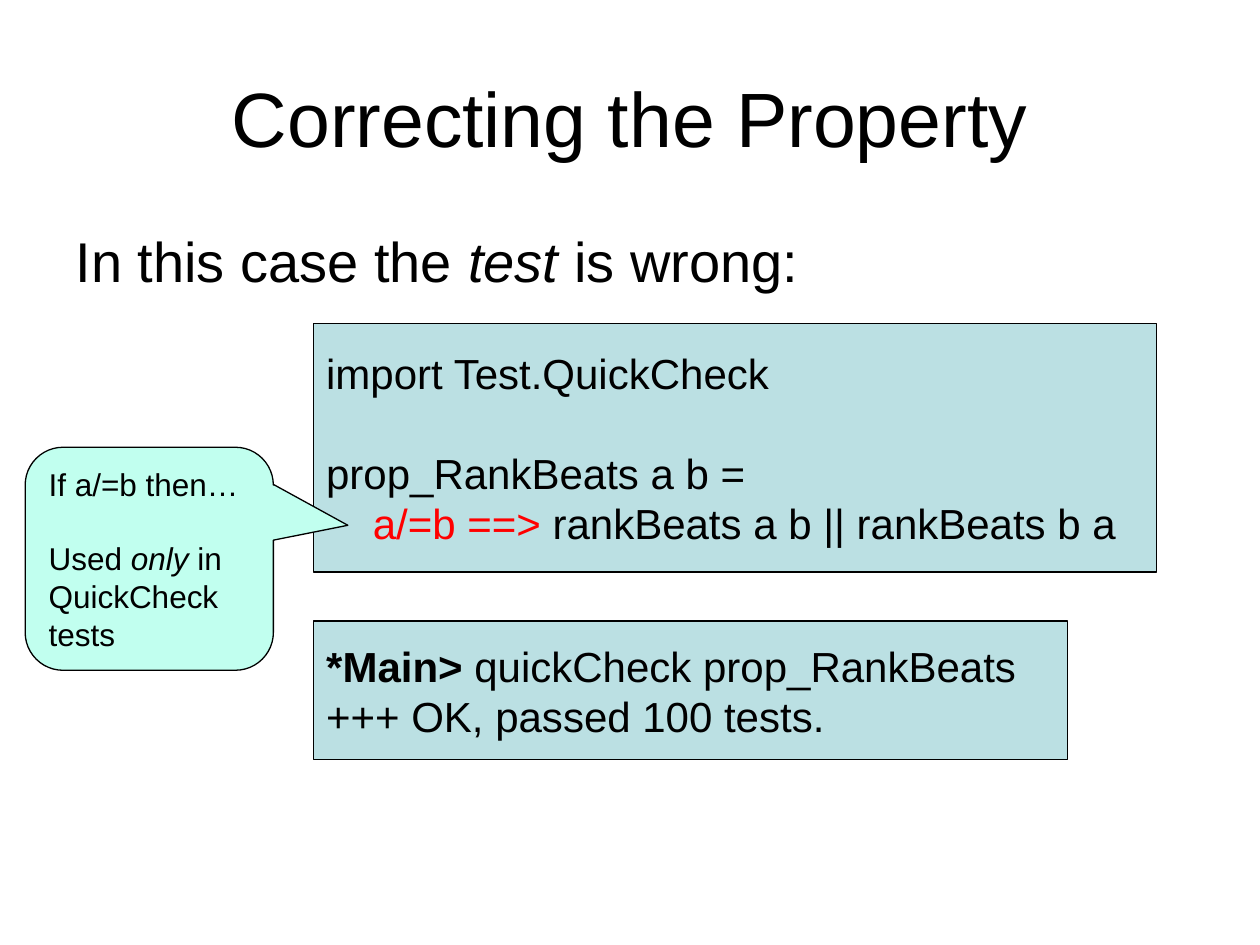
from dataclasses import dataclass
from lxml import etree
from pptx import Presentation
from pptx.dml.color import RGBColor
from pptx.enum.shapes import MSO_SHAPE
from pptx.enum.text import MSO_ANCHOR, PP_ALIGN
from pptx.oxml.ns import qn
from pptx.util import Inches, Pt

RECT = MSO_SHAPE.RECTANGLE
BUBBLE = MSO_SHAPE.ROUNDED_RECTANGULAR_CALLOUT
TOP, MIDDLE = MSO_ANCHOR.TOP, MSO_ANCHOR.MIDDLE
LEFT, CENTER = PP_ALIGN.LEFT, PP_ALIGN.CENTER


@dataclass(frozen=True)
class Theme:
    font: str = "Arial"
    ink: str = "000000"
    alert: str = "FF0000"
    panel: str = "BBE0E3"
    note: str = "C1FFEF"
    title: int = 44
    body: int = 32
    code: int = 24
    small: int = 18
    line: float = 0.75


THEME = Theme()


def apply(item, form):
    for key, value in form.items():
        setattr(item, key, value)


def place(shape, box):
    names = ("left", "top", "width", "height")
    apply(shape, dict(zip(names, map(Inches, box))))


def add_run(para, text, size, color=THEME.ink, **form):
    run = para.add_run()
    run.text = text
    base = {"name": THEME.font, "size": Pt(size), "bold": False, "italic": False}
    apply(run.font, base | form)
    run.font.color.rgb = RGBColor.from_string(color)


def fill_text(frame, lines, size, align=LEFT):
    for i, (runs, form) in enumerate(lines):
        para = frame.paragraphs[0] if i == 0 else frame.add_paragraph()
        apply(para, {"alignment": align} | form)
        for text, style in runs:
            add_run(para, text, size, **style)


def indent(para, left, first=0):
    props = para._p.get_or_add_pPr()
    props.set("marL", str(Inches(left)))
    props.set("indent", str(Inches(first)))
    return props


def add_title(slide, text):
    title = slide.shapes.title
    place(title, (0.5, 0.3, 9, 1.25))
    title.text_frame.vertical_anchor = MIDDLE
    fill_text(title.text_frame, [([(text, {})], {})], THEME.title, CENTER)


def add_body(slide, runs):
    body = slide.placeholders[1]
    place(body, (0.5, 1.75, 9, 4.95))
    frame = body.text_frame
    fill_text(frame, [(runs, {"space_before": Pt(8)})], THEME.body)
    props = indent(frame.paragraphs[0], 0.38, -0.38)
    etree.SubElement(props, qn("a:buNone"))


def add_box(slide, kind, box, color, lines, size, **form):
    shape = slide.shapes.add_shape(kind, *map(Inches, box))
    shape.shadow.inherit = False
    shape.fill.solid()
    shape.fill.fore_color.rgb = RGBColor.from_string(color)
    shape.line.color.rgb = RGBColor.from_string(THEME.ink)
    shape.line.width = Pt(THEME.line)
    apply(shape.text_frame, form)
    fill_text(shape.text_frame, lines, size)
    return shape


def add_code(slide, box, lines):
    return add_box(slide, RECT, box, THEME.panel, lines, THEME.code,
                   vertical_anchor=MIDDLE, word_wrap=False)


def add_note(slide, box, lines, tip):
    note = add_box(slide, BUBBLE, box, THEME.note, lines, THEME.small,
                   vertical_anchor=TOP, word_wrap=True)
    for i, value in enumerate(tip):
        note.adjustments[i] = value


def main():
    deck = Presentation()
    apply(deck, {"slide_width": Inches(10), "slide_height": Inches(7.5)})
    slide = deck.slides.add_slide(deck.slide_layouts[1])

    add_title(slide, "Correcting the Property")
    add_body(slide, [("In this case the ", {}), ("test", {"italic": True}),
                     (" is wrong:", {})])

    source = add_code(slide, (2.49, 2.57, 6.69, 1.97), [
        ([("import Test.QuickCheck", {})], {}),
        ([("prop_RankBeats a b =", {})], {"space_before": Pt(28)}),
        ([("a/=b ==> ", {"color": THEME.alert}),
          ("rankBeats a b || rankBeats b a", {})], {}),
    ])
    indent(source.text_frame.paragraphs[-1], 0.37)

    add_code(slide, (2.49, 4.93, 5.98, 1.1), [
        ([("*Main> ", {"bold": True}), ("quickCheck prop_RankBeats", {})], {}),
        ([("+++ OK, passed 100 tests.", {})], {}),
    ])

    add_note(slide, (0.2, 3.55, 1.97, 1.77), [
        ([("If a/=b then…", {})], {}),
        ([("Used ", {}), ("only", {"italic": True}),
          (" in QuickCheck tests", {})], {"space_before": Pt(21)}),
    ], (0.8, -0.15, 0.17))

    deck.save("out.pptx")


if __name__ == "__main__":
    main()
